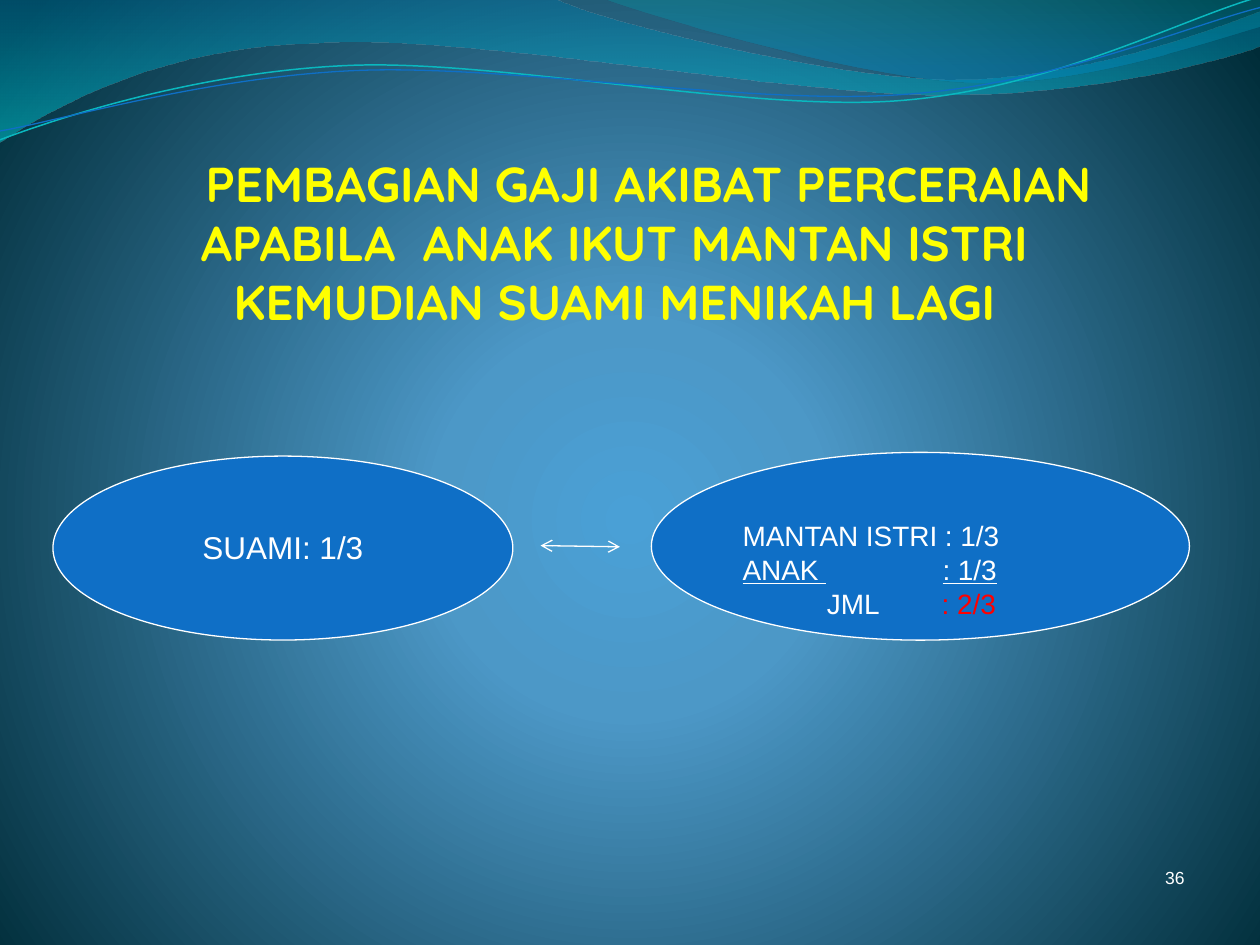
import lxml.etree
import pptx
import pptx.dml.color
import pptx.enum.shapes
import pptx.enum.text
import pptx.oxml.ns
import pptx.util

Inches = pptx.util.Inches
Pt = pptx.util.Pt
qn = pptx.oxml.ns.qn
ALIGN = pptx.enum.text.PP_ALIGN
ANCHOR = pptx.enum.text.MSO_ANCHOR


def color(hex_code):
    return pptx.dml.color.RGBColor.from_string(hex_code)


def set_gradient(fill, owner, stops, direction):
    fill.gradient()
    gradient = next(owner.iter(qn("a:gradFill")))
    for child in list(gradient):
        gradient.remove(child)
    stop_list = lxml.etree.SubElement(gradient, qn("a:gsLst"))
    for position, hex_code, opacity in stops:
        stop = lxml.etree.SubElement(stop_list, qn("a:gs"), pos=str(position * 1000))
        tint = lxml.etree.SubElement(stop, qn("a:srgbClr"), val=hex_code)
        lxml.etree.SubElement(tint, qn("a:alpha"), val=str(opacity * 1000))
    if direction == "circle":
        circle = lxml.etree.SubElement(gradient, qn("a:path"), path="circle")
        lxml.etree.SubElement(circle, qn("a:fillToRect"), l="10000", t="110000", r="10000", b="100000")
    else:
        lxml.etree.SubElement(gradient, qn("a:lin"), ang=str(direction * 60000), scaled="0")


deck = pptx.Presentation()
deck.slide_width, deck.slide_height = Inches(10), Inches(7.5)
page = deck.slides.add_slide(deck.slide_layouts[5])
set_gradient(page.background.fill, page._element,
             [(0, "4AA0D6", 100), (25, "4C98C7", 100), (100, "002C38", 100)], "circle")

waves = [
    ([(0, 0), (4.4, -0.01), (4.76, 0.17, 6.64, 0.63, 7.58, 0.63), (8.53, 0.63, 9.58, 0.26, 10, 0.09),
      (10.01, 0.36), (9.83, 0.44, 8.7, 0.76, 7.46, 0.75), (6.22, 0.75, 3.82, 0.28, 2.57, 0.34),
      (1.29, 0.36, 0.46, 0.83, -0.01, 1.13)],
     [(0, "0074A1", 45), (100, "00C6CF", 55)], None),
    ([(4.79, -0.01), (5.09, 0.11, 6.82, 0.62, 7.69, 0.65), (8.56, 0.69, 9.61, 0.32, 10, 0.21), (10, 0)],
     [(0, "00A1A9", 30), (80, "008BBF", 45)], None),
    ([(0, 1.11), (0.48, 0.93, 1.58, 0.57, 2.77, 0.52), (3.95, 0.47, 5.93, 0.89, 7.13, 0.8),
      (8.33, 0.71, 9.38, 0.15, 9.98, -0.02)],
     None, ("0AB8BF", 0.85)),
    ([(0, 1.04), (0.47, 0.96, 1.64, 0.61, 2.83, 0.56), (4.03, 0.51, 5.97, 0.84, 7.17, 0.75),
      (8.36, 0.67, 9.41, 0.21, 10, 0.06)],
     None, ("0F6FC6", 0.75)),
]
for segments, stops, stroke in waves:
    corners = [(Inches(segment[-2]), Inches(segment[-1])) for segment in segments]
    builder = page.shapes.build_freeform(*corners[0])
    builder.add_line_segments(corners[1:], close=stops is not None)
    wave = builder.convert_to_shape()
    wave.shadow.inherit = False
    straight_parts = list(wave._element.iter(qn("a:lnTo")))
    for part, segment in zip(straight_parts, segments[1:]):
        if len(segment) == 6:
            curve = lxml.etree.Element(qn("a:cubicBezTo"))
            for x, y in zip(segment[0::2], segment[1::2]):
                lxml.etree.SubElement(curve, qn("a:pt"), x=str(Inches(x) - wave.left), y=str(Inches(y) - wave.top))
            part.getparent().replace(part, curve)
    if stops:
        set_gradient(wave.fill, wave._element, stops, 90)
        wave.line.fill.background()
    else:
        wave.fill.background()
        wave.line.color.rgb = color(stroke[0])
        wave.line.width = Pt(stroke[1])

title = page.shapes.title
title.left, title.top, title.width, title.height = Inches(0.58), Inches(0.67), Inches(8.59), Inches(2)
frame = title.text_frame
frame.word_wrap = True
frame.auto_size = pptx.enum.text.MSO_AUTO_SIZE.NONE
frame.vertical_anchor = ANCHOR.BOTTOM
heading = frame.paragraphs[0]
heading.text = "PEMBAGIAN GAJI AKIBAT PERCERAIAN\vAPABILA"
wide_spaces = [(heading.add_run(), 8)]
heading.add_run().text = "ANAK IKUT MANTAN ISTRI KEMUDIAN SUAMI MENIKAH LAGI"
heading.alignment = ALIGN.CENTER
heading.font.name, heading.font.size, heading.font.bold = "Quicksand", Pt(28), True
heading.font.color.rgb = color("FFFF00")
heading._p.get_or_add_pPr().set("indent", str(Inches(0.54)))

number = page.shapes.add_textbox(Inches(7.17), Inches(6.83), Inches(2.33), Inches(0.5))
number.text_frame.word_wrap = True
para = number.text_frame.paragraphs[0]
para.text = "36"
para.alignment = ALIGN.RIGHT
para.font.name, para.font.size = "Arial", Pt(10)
para.font.color.rgb = color("FFFFFF")

ovals = [
    (0.42, 3.62, 3.65, 1.46, 18, ALIGN.CENTER, ANCHOR.MIDDLE, 0.03, ["SUAMI: 1/3"]),
    (5.17, 3.59, 4.27, 1.49, 16, ALIGN.LEFT, ANCHOR.TOP, 0.31,
     ["MANTAN ISTRI : 1/3", "ANAK", "\tJML\t"]),
]
for left, top, width, height, size, alignment, anchor, inset, lines in ovals:
    oval = page.shapes.add_shape(pptx.enum.shapes.MSO_SHAPE.OVAL,
                                 Inches(left), Inches(top), Inches(width), Inches(height))
    oval.shadow.inherit = False
    oval.fill.solid()
    oval.fill.fore_color.rgb = color("0F6FC6")
    oval.line.color.rgb = color("FFFFFF")
    oval.line.width = Pt(0.75)
    frame = oval.text_frame
    frame.word_wrap = True
    frame.vertical_anchor = anchor
    frame.margin_top = Inches(inset)
    frame.text = "\n".join(lines)
    for para in frame.paragraphs:
        para.alignment = alignment
        para.font.name, para.font.size = "Arial", Pt(size)
        para.font.color.rgb = color("FFFFFF")

child, total = frame.paragraphs[1:]
child.font.underline = True
wide_spaces.append((child.add_run(), 66.4))
child.add_run().text = ": 1/3"
for span, extra_points in wide_spaces:
    span.text = " "
    span._r.get_or_add_rPr().set("spc", str(round(extra_points * 100)))

tabs = lxml.etree.Element(qn("a:tabLst"))
total._p.get_or_add_pPr().insert(0, tabs)
for stop in (0.67, 1.58):
    lxml.etree.SubElement(tabs, qn("a:tab"), pos=str(Inches(stop)), algn="l")
share = total.add_run()
share.text = ": 2/3"
share.font.color.rgb = color("FF0000")

arrow = page.shapes.add_connector(pptx.enum.shapes.MSO_CONNECTOR.STRAIGHT,
                                  Inches(4.29), Inches(4.33), Inches(4.92), Inches(4.34))
arrow.line.color.rgb = color("FFFFFF")
arrow.line.width = Pt(0.75)
stroke = arrow.line._get_or_add_ln()
for end in ("a:headEnd", "a:tailEnd"):
    lxml.etree.SubElement(stroke, qn(end), type="arrow")
lxml.etree.SubElement(arrow._element.spPr, qn("a:effectLst"))

deck.save("out.pptx")
